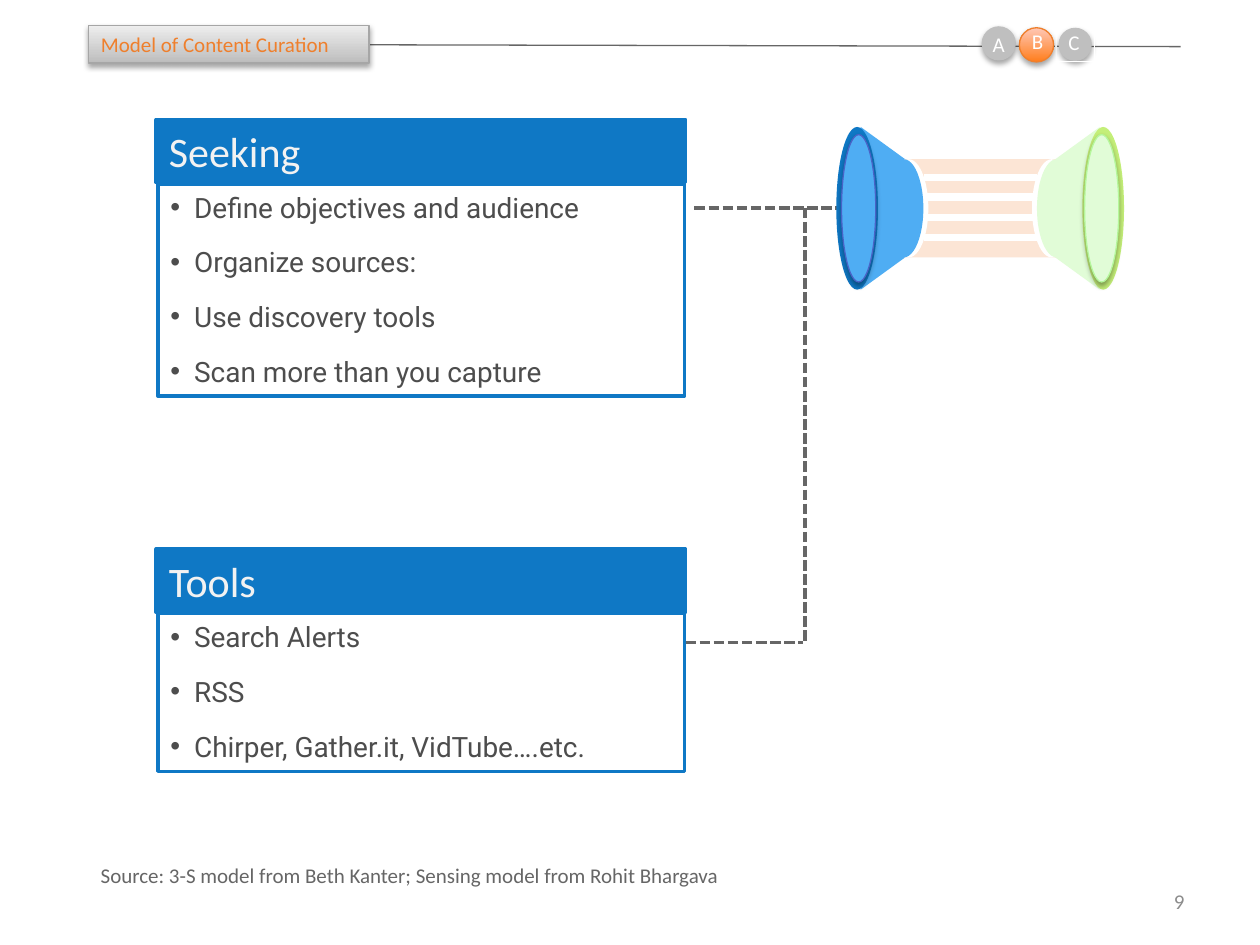
from dataclasses import dataclass
from typing import Optional

from lxml import etree
from pptx import Presentation
from pptx.dml.color import RGBColor
from pptx.enum.dml import MSO_LINE
from pptx.enum.shapes import MSO_CONNECTOR, MSO_SHAPE
from pptx.enum.text import MSO_ANCHOR, MSO_AUTO_SIZE, PP_ALIGN
from pptx.oxml.ns import qn
from pptx.util import Cm, Pt

LEFT, RIGHT = PP_ALIGN.LEFT, PP_ALIGN.RIGHT
TOP, MIDDLE = MSO_ANCHOR.TOP, MSO_ANCHOR.MIDDLE
OVAL, TRIANGLE, RECTANGLE = MSO_SHAPE.OVAL, MSO_SHAPE.ISOSCELES_TRIANGLE, MSO_SHAPE.RECTANGLE
STRAIGHT, DASHED = MSO_CONNECTOR.STRAIGHT, MSO_LINE.SQUARE_DOT
COMPARISON_LAYOUT = 4

WHITE = RGBColor(0xFF, 0xFF, 0xFF)
BLUE = RGBColor(0x0F, 0x78, 0xC5)
SKY = RGBColor(0x4F, 0xAD, 0xF3)
INDIGO = RGBColor(0x49, 0x63, 0xC7)
LIME = RGBColor(0xC4, 0xEF, 0x79)
MINT = RGBColor(0xE1, 0xFC, 0xD7)
LEAF = RGBColor(0xB5, 0xF7, 0x9C)
PEACH = RGBColor(0xFC, 0xE5, 0xD5)
ORANGE = RGBColor(0xEF, 0x7F, 0x2C)
BADGE_ORANGE = [RGBColor(0xFF, 0x7D, 0x1C), RGBColor(0xFF, 0xC8, 0xB6)]
BANNER_GREY = [RGBColor(0xBD, 0xBD, 0xBD), RGBColor(0xEE, 0xEE, 0xEE)]
BANNER_EDGE = RGBColor(0xA6, 0xA6, 0xA6)
BADGE_GREY = RGBColor(0xBF, 0xBF, 0xBF)
RULE_GREY = RGBColor(0x66, 0x66, 0x66)
LIST_GREY = RGBColor(0x4D, 0x4D, 0x4D)
NUMBER_GREY = RGBColor(0x8C, 0x8C, 0x8C)
HEADING_WHITE = RGBColor(0xF2, 0xF2, 0xF2)


@dataclass
class Panel:
    heading: str
    items: list[str]
    top: float
    height: float
    heading_index: int
    list_index: int


@dataclass
class Cone:
    side: int  # -1 left of the centre, 1 right of it
    fill: RGBColor
    rim: RGBColor
    edge: RGBColor


@dataclass
class Badge:
    letter: str
    circle: tuple[float, float, float]
    label: tuple[float, float]
    fill: object
    circle_edge: Optional[RGBColor] = None
    label_edge: Optional[RGBColor] = None


PANELS = [
    Panel("Seeking", ["Define objectives and audience", "Organize sources:",
                      "Use discovery tools", "Scan more than you capture"], 2.41, 4.27, 1, 2),
    Panel("Tools", ["Search Alerts", "RSS", "Chirper, Gather.it, VidTube….etc."],
          11.07, 3.18, 3, 4),
]
CONES = [Cone(1, MINT, LIME, LEAF), Cone(-1, SKY, BLUE, INDIGO)]
BADGES = [
    Badge("C", (21.34, 0.56, 0.67), (21.29, 0.48), BADGE_GREY, label_edge=WHITE),
    Badge("A", (19.79, 0.53, 0.69), (19.76, 0.51), BADGE_GREY),
    Badge("B", (20.55, 0.56, 0.69), (20.55, 0.46), BADGE_ORANGE, ORANGE),
]
CENTRE_X, CENTRE_Y = 19.76, 4.2  # middle of the double funnel


def place(shape, left: float, top: float, width: float, height: float) -> None:
    shape.left, shape.top, shape.width, shape.height = map(Cm, (left, top, width, height))


def paint(shape, fill=None, edge: Optional[RGBColor] = None, weight: float = 0.75,
          shadow: bool = False) -> None:
    """Fill with a colour or a [bottom, top] list, and set outline and shadow."""
    if isinstance(fill, list):
        shape.fill.gradient()
        shape.fill.gradient_angle = 90
        for stop, color in zip(shape.fill.gradient_stops, fill):
            stop.color.rgb = color
    elif fill is not None:
        shape.fill.solid()
        shape.fill.fore_color.rgb = fill
    if edge is None:
        shape.line.fill.background()
    else:
        shape.line.color.rgb = edge
        shape.line.width = Pt(weight)
    shape.shadow.inherit = False
    if shadow:
        effects = shape.element.spPr.find(qn("a:effectLst"))
        outer = etree.SubElement(effects, qn("a:outerShdw"), blurRad=str(Pt(3.1)),
                                 dist=str(Pt(1.8)), dir="5400000", rotWithShape="0")
        color = etree.SubElement(outer, qn("a:srgbClr"), val="000000")
        etree.SubElement(color, qn("a:alpha"), val="35000")


def write(shape, *lines: str, size: float = 12, color: RGBColor = RULE_GREY,
          font: str = "Calibri", align=LEFT, anchor=TOP, wrap: bool = True,
          after: float = 0, bullets: bool = False) -> None:
    frame = shape.text_frame
    frame.auto_size = MSO_AUTO_SIZE.NONE
    frame.word_wrap, frame.vertical_anchor = wrap, anchor
    for number, line in enumerate(lines):
        para = frame.add_paragraph() if number else frame.paragraphs[0]
        para.alignment = align
        para.space_before, para.space_after = Pt(0), Pt(after)
        span = para.add_run()
        span.text = line
        span.font.size, span.font.name, span.font.bold = Pt(size), font, False
        span.font.color.rgb = color
        if bullets:
            properties = para._p.get_or_add_pPr()
            properties.set("marL", str(Cm(0.48)))
            properties.set("indent", str(Cm(-0.48)))
            etree.SubElement(properties, qn("a:buChar"), char="•")


def add_centred(page, kind, x: float, y: float, width: float, height: float, **look):
    shape = page.shapes.add_shape(kind, Cm(x - width / 2), Cm(y - height / 2),
                                  Cm(width), Cm(height))
    paint(shape, **look)
    return shape


def add_line(page, x1: float, y1: float, x2: float, y2: float, color: RGBColor,
             weight: float, dash=None) -> None:
    line = page.shapes.add_connector(STRAIGHT, Cm(x1), Cm(y1), Cm(x2), Cm(y2))
    line.line.color.rgb, line.line.width = color, Pt(weight)
    if dash:
        line.line.dash_style = dash
    etree.SubElement(line.element.spPr, qn("a:effectLst"))


def add_text(page, text: str, left: float, top: float, width: float, height: float, **form):
    box = page.shapes.add_textbox(Cm(left), Cm(top), Cm(width), Cm(height))
    write(box, text, **form)
    return box


def draw_funnel(page) -> None:
    for cone in CONES:
        body = add_centred(page, TRIANGLE, CENTRE_X + cone.side * 1.28, CENTRE_Y,
                           3.28, 2.26, fill=cone.fill)
        body.rotation = -90 * cone.side
    add_centred(page, RECTANGLE, CENTRE_X, CENTRE_Y, 3.07, 1.98, fill=PEACH)
    for y in (3.58, 3.97, 4.39, 4.79):
        add_line(page, 18.62, y, 20.9, y, WHITE, 4.25)
    for cone in reversed(CONES):
        for offset, width, height, look in (
            (2.48, 0.84, 3.28, dict(fill=cone.rim)),
            (2.45, 0.69, 2.97, dict(fill=cone.fill, edge=cone.edge, shadow=True)),
            (1.44, 0.79, 1.98, dict(fill=WHITE)),
            (1.54, 0.79, 1.98, dict(fill=cone.fill)),
        ):
            add_centred(page, OVAL, CENTRE_X + cone.side * offset, CENTRE_Y,
                        width, height, **look)


def draw_panel(page, panel: Panel) -> None:
    holders = {holder.placeholder_format.idx: holder for holder in page.placeholders}
    listing, heading = holders[panel.list_index], holders[panel.heading_index]
    place(listing, 3.18, panel.top + 1.3, 10.62, panel.height)
    paint(listing, edge=BLUE, weight=2)
    write(listing, *panel.items, size=16, color=LIST_GREY, font="Roboto",
          after=12, bullets=True)
    place(heading, 3.15, panel.top, 10.67, 1.27)
    paint(heading, BLUE, BLUE, 2.25)
    write(heading, panel.heading, size=24, color=HEADING_WHITE)


def draw_banner(page) -> None:
    add_line(page, 1.78, 0.89, 23.8, 0.94, RULE_GREY, 0.75)
    title = page.shapes.title
    place(title, 1.78, 0.51, 5.66, 0.76)
    outline = etree.Element(qn("a:prstGeom"), prst="homePlate")
    etree.SubElement(outline, qn("a:avLst"))
    title.element.spPr.insert(1, outline)
    paint(title, BANNER_GREY, BANNER_EDGE, shadow=True)
    write(title, "Model of Content Curation", color=ORANGE, anchor=MIDDLE)
    title.element.getparent().append(title.element)  # above the rule


def draw_badge(page, badge: Badge) -> None:
    left, top, size = badge.circle
    add_centred(page, OVAL, left + size / 2, top + size / 2, size, size,
                fill=badge.fill, edge=badge.circle_edge, shadow=True)
    label = add_text(page, badge.letter, *badge.label, 0.78, 0.76, color=WHITE)
    paint(label, edge=badge.label_edge)


def main() -> None:
    deck = Presentation()
    deck.slide_width, deck.slide_height = Cm(25.4), Cm(19.05)
    page = deck.slides.add_slide(deck.slide_layouts[COMPARISON_LAYOUT])

    # Panels and the dashed links to the funnel
    for panel in PANELS:
        draw_panel(page, panel)
    for ends in ((14, 4.19, 16.87, 4.19), (16.23, 4.19, 16.23, 12.95),
                 (13.82, 12.95, 16.18, 12.95)):
        add_line(page, *ends, RULE_GREY, 2, DASHED)
    draw_funnel(page)

    # Top banner with section badges
    draw_banner(page)
    for badge in BADGES:
        draw_badge(page, badge)

    # Footer
    add_text(page, "9", 18.21, 17.65, 5.92, 1.02, color=NUMBER_GREY, align=RIGHT, anchor=MIDDLE)
    add_text(page, "Source: 3-S model from Beth Kanter; Sensing model from Rohit Bhargava",
             1.78, 17.27, 13.18, 0.76, wrap=False)
    deck.save("out.pptx")


if __name__ == "__main__":
    main()
